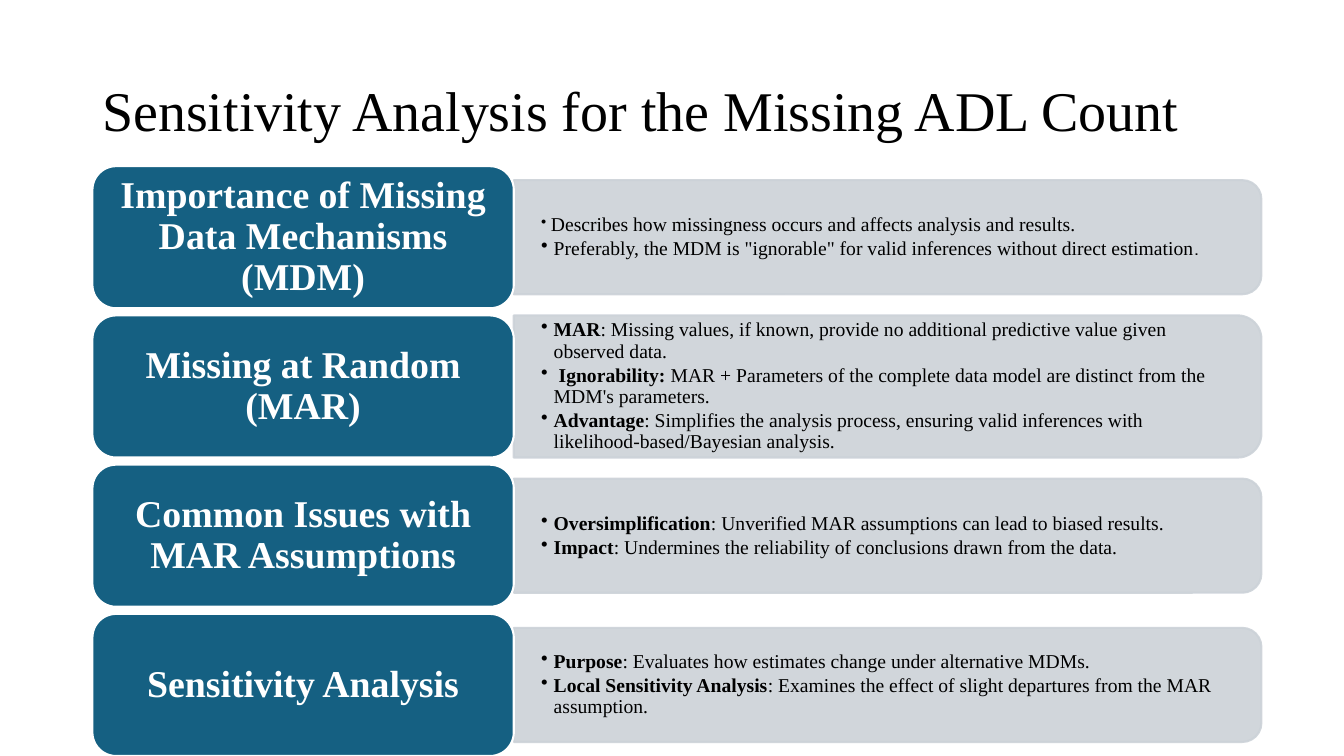
import pptx
import pptx.util
import pptx.dml.color
import pptx.enum.shapes
import pptx.enum.text
import pptx.oxml
import pptx.oxml.ns

Pt = pptx.util.Pt
Kind = pptx.enum.shapes.MSO_SHAPE
Align = pptx.enum.text.PP_ALIGN
Middle = pptx.enum.text.MSO_ANCHOR.MIDDLE

COLORS = {"black": "000000", "white": "FFFFFF", "blue": "156082", "grey": "CCD2D8"}
SERIF = "Times New Roman"
FORMATS = {
    "title": {"name": SERIF, "size": Pt(40)},
    "head": {"name": SERIF, "size": Pt(27), "bold": True},
    "body": {"name": SERIF, "size": Pt(14), "bold": False},
    "bold": {"name": SERIF, "size": Pt(14), "bold": True},
    "small": {"name": "Cabin", "size": Pt(11)},
    "stop": {"name": "Cabin", "size": Pt(14)},
}

# Each row: heading, panel height, bullets as (indent, runs)
ROWS = [
    ("Importance of Missing Data Mechanisms (MDM)", 81.5, [
        (4.5, [(" ", "small"),
               ("Describes how missingness occurs and affects analysis and results.", "body")]),
        (9, [('Preferably, the MDM is "ignorable" for valid inferences without direct estimation',
              "body"), (".", "stop")]),
    ]),
    ("Missing at Random (MAR)", 101.5, [
        (9, [("MAR", "bold"),
             (": Missing values, if known, provide no additional predictive value given "
              "observed data.", "body")]),
        (9, [(" ", "body"), ("Ignorability: ", "bold"),
             ("MAR + Parameters of the complete data model are distinct from the "
              "MDM's parameters.", "body")]),
        (9, [("Advantage", "bold"),
             (": Simplifies the analysis process, ensuring valid inferences with "
              "likelihood-based/Bayesian analysis.", "body")]),
    ]),
    ("Common Issues with MAR Assumptions", 81.5, [
        (9, [("Oversimplification", "bold"),
             (": Unverified MAR assumptions can lead to biased results.", "body")]),
        (9, [("Impact", "bold"),
             (": Undermines the reliability of conclusions drawn from the data.", "body")]),
    ]),
    ("Sensitivity Analysis", 81.5, [
        (9, [("Purpose", "bold"),
             (": Evaluates how estimates change under alternative MDMs.", "body")]),
        (9, [("Local Sensitivity Analysis", "bold"),
             (": Examines the effect of slight departures from the MAR assumption.", "body")]),
    ]),
]


class Deck:
    def __init__(self, wide, high):
        self.show = pptx.Presentation()
        self.show.slide_width, self.show.slide_height = Pt(wide), Pt(high)
        self.slide = self.show.slides.add_slide(self.show.slide_layouts[6])

    def tint(self, color, name):
        color.rgb = pptx.dml.color.RGBColor.from_string(COLORS[name])

    def frame(self, shape, side, edge):
        frame = shape.text_frame
        values = {"word_wrap": True, "vertical_anchor": Middle,
                  "margin_left": Pt(side), "margin_right": Pt(side),
                  "margin_top": Pt(edge), "margin_bottom": Pt(edge)}
        for key, value in values.items():
            setattr(frame, key, value)
        return frame

    def words(self, para, runs, color, align=Align.LEFT):
        para.alignment, para.line_spacing = align, 0.9
        for text, style in runs:
            run = para.add_run()
            run.text = text
            for key, value in FORMATS[style].items():
                setattr(run.font, key, value)
            self.tint(run.font.color, color)

    def bullet(self, para, indent):
        props = para._p.get_or_add_pPr()
        props.set("marL", str(Pt(indent)))
        props.set("indent", str(-Pt(indent)))
        mark = pptx.oxml.parse_xml(
            "<a:buChar %s char='•'/>" % pptx.oxml.ns.nsdecls("a"))
        props.append(mark)

    def shape(self, kind, box, fill, line):
        shape = self.slide.shapes.add_shape(kind, *map(Pt, box))
        shape.shadow.inherit = False
        shape.fill.solid()
        self.tint(shape.fill.fore_color, fill)
        shape.line.width = Pt(1.5)
        self.tint(shape.line.color, line)
        return shape

    def title(self, box, text):
        area = self.slide.shapes.add_textbox(*map(Pt, box))
        frame = self.frame(area, 7.2, 3.6)
        self.words(frame.paragraphs[0], [(text, "title")], "black")

    def panel(self, left, mid, wide, high):
        # The quarter turn puts the two round corners on the right
        box = (left + (wide - high) / 2, mid - wide / 2, high, wide)
        shape = self.shape(Kind.ROUND_2_SAME_RECTANGLE, box, "grey", "grey")
        shape.rotation = 90
        for color in shape._element.spPr.iter(pptx.oxml.ns.qn("a:srgbClr")):
            color.append(pptx.oxml.parse_xml(
                "<a:alpha %s val='90000'/>" % pptx.oxml.ns.nsdecls("a")))

    def points(self, box, items):
        area = self.slide.shapes.add_textbox(*map(Pt, box))
        frame = self.frame(area, 19.5, 9.75)
        for spot, (indent, runs) in enumerate(items):
            para = frame.add_paragraph() if spot else frame.paragraphs[0]
            self.words(para, runs, "black")
            para.space_after = Pt(2.1)
            self.bullet(para, indent)

    def head(self, box, text):
        shape = self.shape(Kind.ROUNDED_RECTANGLE, box, "blue", "white")
        frame = self.frame(shape, 12.6, 9)
        self.words(frame.paragraphs[0], [(text, "head")], "white", Align.CENTER)


def main():
    deck = Deck(960, 540)
    deck.title((66, 29, 828, 104), "Sensitivity Analysis for the Missing ADL Count")

    # Four rows: grey panel, its bullets, blue heading
    left, top, wide, high, step = 66, 118.7, 301, 101.5, 106.6
    edge, span = left + wide, 534
    for row, (name, tall, items) in enumerate(ROWS):
        y = top + row * step
        mid = y + high / 2
        deck.panel(edge, mid, span, tall)
        deck.points((edge, mid - tall / 2 + 4, span - 4, tall - 8), items)
        deck.head((left, y, wide, high), name)

    deck.show.save("out.pptx")


if __name__ == "__main__":
    main()
